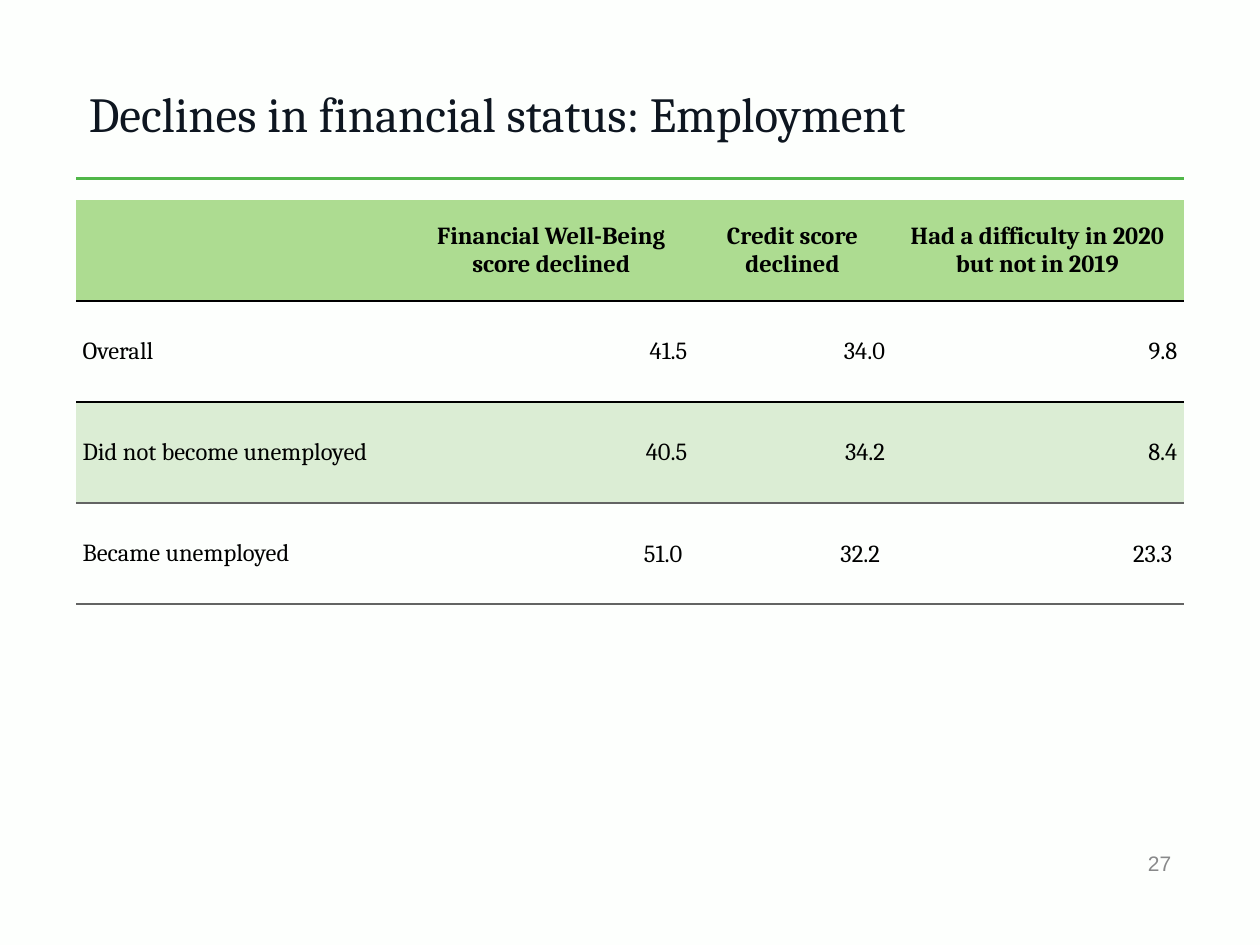
import pptx
import pptx.util
import pptx.dml.color
import pptx.enum.shapes
import pptx.enum.text
import pptx.oxml
import pptx.oxml.ns
from lxml import etree

Pt = pptx.util.Pt
ALIGN = pptx.enum.text.PP_ALIGN
MIDDLE = pptx.enum.text.MSO_ANCHOR.MIDDLE

TITLE = "Declines in financial status: Employment"
PAGE_NUMBER = "27"
ROWS = [
    ["", "Financial Well-Being score declined", "Credit score declined",
     "Had a difficulty in 2020 but not in 2019"],
    ["Overall", "41.5", "34.0", "9.8"],
    ["Did not become unemployed", "40.5", "34.2", "8.4"],
    ["Became unemployed", "51.0", "32.2", "23.3"],
]
COLORS = {
    "background": "FDFFFD", "rule": "50B748", "title": "0E1620",
    "number": "88898A", "text": "000000", "header": "ADDC91",
    "band": "DBEDD4", "black": "000000", "gray": "636463",
}
ROW_FILLS = ["header", "background", "band", "background"]
ROW_EDGES = [None, "black", "black", "gray", "gray"]
COLUMN_WIDTHS = [190.1, 162.7, 113, 167]
ROW_HEIGHT = 57.75
LEFT, RIGHT = 43.6, 676.4
CELL_MARGINS = (3.6, 3.6, 3.6, 3.6)
LAST_VALUE_MARGINS = (0.75, 0.75, 6.5, 0)


def color(name):
    return pptx.dml.color.RGBColor.from_string(COLORS[name])


def set_margins(target, margins):
    (target.margin_left, target.margin_top,
     target.margin_right, target.margin_bottom) = map(Pt, margins)


def write(paragraph, text, font_name, size, color_name, align, bold=False):
    paragraph.alignment = align
    run = paragraph.add_run()
    run.text = text
    run.font.name = font_name
    run.font.size = Pt(size)
    run.font.bold = bold
    run.font.color.rgb = color(color_name)


def set_border(cell, side, color_name):
    properties = cell._tc.get_or_add_tcPr()
    line = etree.SubElement(properties, pptx.oxml.ns.qn("a:ln" + side), w=str(Pt(1)))
    if color_name is None:
        etree.SubElement(line, pptx.oxml.ns.qn("a:noFill"))
    else:
        fill = etree.SubElement(line, pptx.oxml.ns.qn("a:solidFill"))
        etree.SubElement(fill, pptx.oxml.ns.qn("a:srgbClr"), val=COLORS[color_name])


def add_title(slide):
    title = slide.shapes.title
    title.left, title.top, title.width, title.height = map(Pt, (LEFT, 35.3, RIGHT - LEFT, 58.3))
    frame = title.text_frame
    frame.vertical_anchor = MIDDLE
    frame.word_wrap = True
    set_margins(frame, (7.2, 3.6, 7.2, 3.6))
    write(frame.paragraphs[0], TITLE, "Cambria", 28, "title", ALIGN.LEFT)


def add_rule(slide):
    rule = slide.shapes.add_connector(
        pptx.enum.shapes.MSO_CONNECTOR.STRAIGHT, Pt(LEFT), Pt(102), Pt(RIGHT), Pt(102))
    rule.line.color.rgb = color("rule")
    rule.line.width = Pt(2)
    etree.SubElement(rule._element.spPr, pptx.oxml.ns.qn("a:effectLst"))


def add_page_number(slide):
    box = slide.shapes.add_textbox(Pt(448.4), Pt(479), Pt(228), Pt(28.8))
    frame = box.text_frame
    frame.word_wrap = True
    frame.vertical_anchor = MIDDLE
    write(frame.paragraphs[0], PAGE_NUMBER, "Arial", 12, "number", ALIGN.RIGHT)


def add_status_table(slide):
    table = slide.shapes.add_table(
        len(ROWS), len(COLUMN_WIDTHS), Pt(LEFT), Pt(114.3),
        Pt(sum(COLUMN_WIDTHS)), Pt(ROW_HEIGHT * len(ROWS))).table
    for column, width in zip(table.columns, COLUMN_WIDTHS):
        column.width = Pt(width)
    for row_index, texts in enumerate(ROWS):
        table.rows[row_index].height = Pt(ROW_HEIGHT)
        for column_index, text in enumerate(texts):
            cell = table.cell(row_index, column_index)
            is_header = row_index == 0
            is_last_value = row_index == len(ROWS) - 1 and column_index > 0
            align = (ALIGN.CENTER if is_header
                     else ALIGN.RIGHT if column_index else ALIGN.LEFT)
            set_margins(cell, LAST_VALUE_MARGINS if is_last_value else CELL_MARGINS)
            cell.vertical_anchor = MIDDLE
            edges = (None, None, ROW_EDGES[row_index], ROW_EDGES[row_index + 1])
            for side, edge in zip("LRTB", edges):
                set_border(cell, side, edge)
            cell.fill.solid()
            cell.fill.fore_color.rgb = color(ROW_FILLS[row_index])
            if text:
                write(cell.text_frame.paragraphs[0], text, "Cambria", 14, "text",
                      align, is_header)


def main():
    presentation = pptx.Presentation()
    presentation.slide_width, presentation.slide_height = Pt(720), Pt(540)
    slide = presentation.slides.add_slide(presentation.slide_layouts[5])
    slide.background.fill.solid()
    slide.background.fill.fore_color.rgb = color("background")
    add_rule(slide)
    add_title(slide)
    add_page_number(slide)
    add_status_table(slide)
    presentation.save("out.pptx")


if __name__ == "__main__":
    main()
